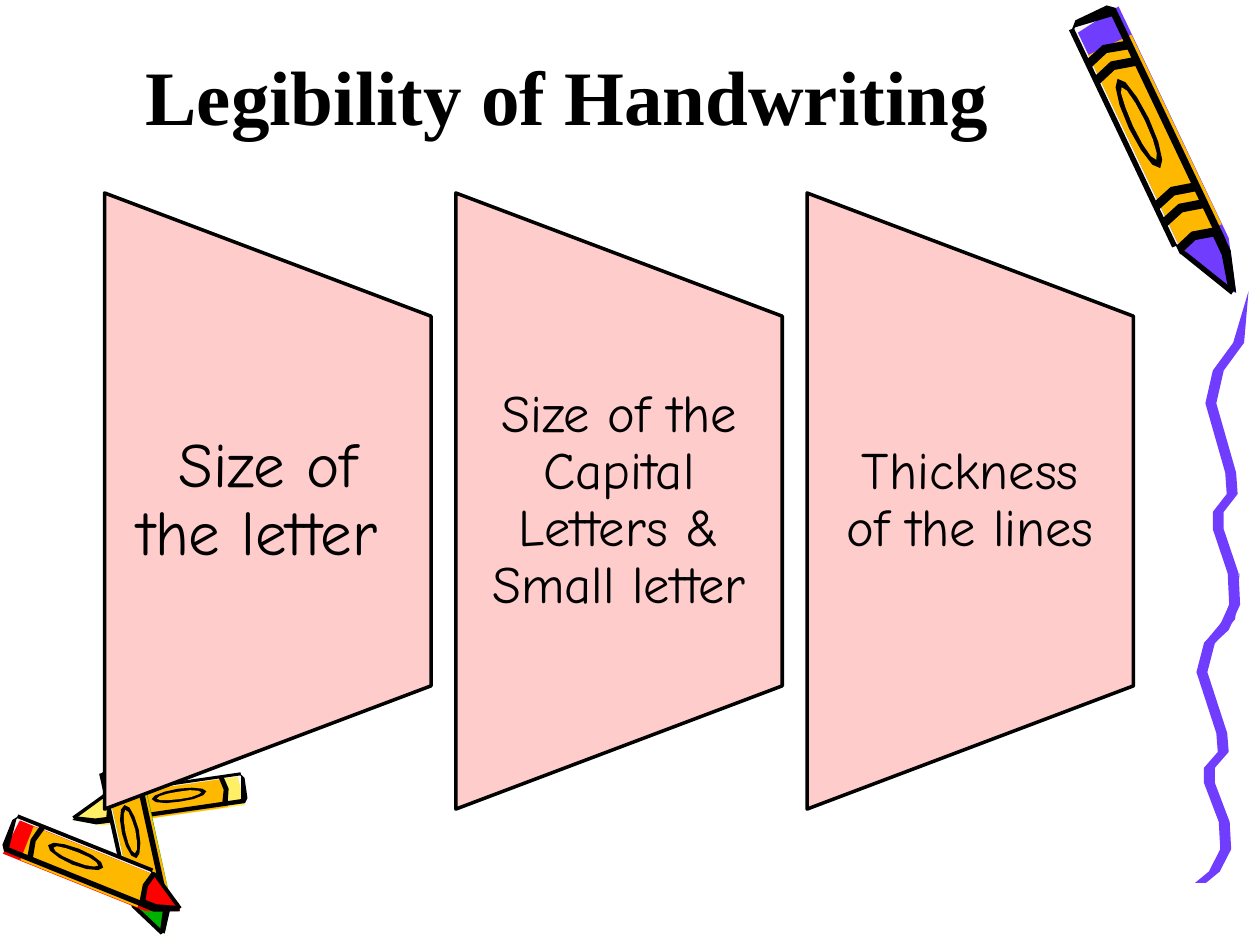
from dataclasses import dataclass
from math import cos, hypot, sin, tau

from pptx import Presentation
from pptx.dml.color import RGBColor
from pptx.enum.shapes import MSO_SHAPE
from pptx.enum.text import MSO_ANCHOR, MSO_AUTO_SIZE, PP_ALIGN
from pptx.util import Cm, Pt

MANUAL_OPERATION = MSO_SHAPE.FLOWCHART_MANUAL_OPERATION
MIDDLE, BOTTOM = MSO_ANCHOR.MIDDLE, MSO_ANCHOR.BOTTOM
CENTER = PP_ALIGN.CENTER
NO_AUTOFIT = MSO_AUTO_SIZE.NONE


@dataclass(frozen=True)
class Theme:
    black: RGBColor = RGBColor.from_string("000000")
    purple: RGBColor = RGBColor.from_string("703DFF")
    orange: RGBColor = RGBColor.from_string("FFB800")
    paper: RGBColor = RGBColor.from_string("F8F8F8")
    yellow: RGBColor = RGBColor.from_string("FFEF66")
    red: RGBColor = RGBColor.from_string("FF0000")
    green: RGBColor = RGBColor.from_string("00B200")
    panel: RGBColor = RGBColor.from_string("FFCCCC")
    title_font: str = "Times New Roman"
    body_font: str = "Comic Neue"
    title_size: Pt = Pt(44)
    large_size: Pt = Pt(36)
    body_size: Pt = Pt(30)


theme = Theme()


def draw_outline(points, colour):
    """Draw a closed, filled outline through (x, y) points given in centimetres."""
    vertices = [(round(x * 100), round(y * 100)) for x, y in points]
    builder = slide.shapes.build_freeform(*vertices[0], scale=Cm(0.01))
    builder.add_line_segments(vertices[1:], close=True)
    outline = builder.convert_to_shape()
    outline.shadow.inherit = False
    outline.fill.solid()
    outline.fill.fore_color.rgb = colour
    outline.line.fill.background()


def write_text(shape, text, font_name, size, anchor, bold=False):
    """Fill a shape with one centred black paragraph and return it."""
    frame = shape.text_frame
    frame.text = text
    frame.word_wrap = True
    frame.auto_size = NO_AUTOFIT
    frame.vertical_anchor = anchor
    paragraph = frame.paragraphs[0]
    paragraph.alignment = CENTER
    font = paragraph.runs[0].font
    font.name, font.size, font.bold = font_name, size, bold
    font.color.rgb = theme.black
    return paragraph


presentation = Presentation()
presentation.slide_width, presentation.slide_height = Cm(25.4), Cm(19.05)
slide = presentation.slides.add_slide(presentation.slide_layouts[5])

# A crayon is described by (along, across): along runs from 0 at the flat end
# to 1 at the tip, across is a share of the width on either side of the axis.
PAPER = [(0, -0.5), (0, 0.35), (0.78, 0.35), (0.78, -0.5)]
WAX = [(0.02, -0.4), (0, 0.43), (0.83, 0.43), (1, 0.14), (0.98, 0), (0.78, -0.4)]
SLEEVE = [(0.1, -0.4), (0.1, 0.42), (0.78, 0.42), (0.78, -0.4)]
INK = {
    "near edge": [(0, -0.52), (0, -0.43), (0.78, -0.43), (0.78, -0.52)],
    "far edge": [(0, 0.25), (0, 0.37), (0.83, 0.37), (0.83, 0.25)],
    "flat end": [(0.01, -0.52), (-0.02, -0.35), (-0.02, 0.25), (0, 0.37), (0.02, 0.28), (0, -0.4)],
    "near tip": [(0.77, -0.44), (0.81, -0.44), (1, 0.05), (0.99, 0.13)],
    "far tip": [(0.78, 0.37), (0.87, 0.37), (1, 0.14), (0.97, 0.06), (0.87, 0.2), (0.78, 0.2)],
}
OVALS = [(0.16, 0.19, theme.black), (0.13, 0.11, theme.orange)]  # radii along and across
OVAL_ALONG, OVAL_ACROSS, OVAL_STEPS = 0.37, -0.12, 12

# Flat end, tip, width (negative mirrors the crayon), wax colour, places of the bands
CRAYONS = [
    ((22.1, 0.35), (24.77, 5.97), 1.17, theme.purple, [0.11, 0.17, 0.62, 0.68, 0.78]),
    ((4.9, 15.93), (1.45, 16.43), 0.7, theme.yellow, [0.1, 0.78]),
    ((2.46, 15.5), (3.2, 18.85), 0.9, theme.green, [0.1, 0.78]),
    ((0.2, 16.85), (3.68, 18.25), -0.9, theme.red, [0.13, 0.78]),
]
for (end_x, end_y), (tip_x, tip_y), width, wax, bands in CRAYONS:
    parts = [(PAPER, theme.paper), (WAX, wax), (SLEEVE, theme.orange)]
    parts += [(points, theme.black) for points in INK.values()]
    for band in bands:
        points = [(band, -0.45), (band - 0.02, -0.1), (band, 0.3),
                  (band + 0.03, 0.3), (band + 0.01, -0.1), (band + 0.03, -0.45)]
        parts.append((points, theme.black))
    for radius_along, radius_across, colour in OVALS:
        angles = [tau * step / OVAL_STEPS for step in range(OVAL_STEPS)]
        points = [(OVAL_ALONG + radius_along * cos(angle), OVAL_ACROSS + radius_across * sin(angle))
                  for angle in angles]
        parts.append((points, colour))

    axis_x, axis_y = tip_x - end_x, tip_y - end_y
    across_scale = width / hypot(axis_x, axis_y)
    for points, colour in parts:
        draw_outline([(end_x + along * axis_x + across * across_scale * axis_y,
                       end_y + along * axis_y - across * across_scale * axis_x)
                      for along, across in points], colour)

# Squiggle: one centre line, drawn twice; the lower strand is shorter
CENTER_LINE = [(0.89, 0), (0.69, 1.04), (0.28, 1.6), (0.13, 2.26), (0.53, 3.66), (0.56, 4.09),
               (0.28, 4.45), (0.28, 4.8), (0.58, 5.69), (0.61, 6.32), (0.38, 6.83), (0.1, 7.09)]
HALF_STROKE = 0.11
STRANDS = [(24.1, 11.56, 0.88), (24.28, 5.87, 1)]  # left, top, vertical scale
for left, top, scale in STRANDS:
    strand = [(left + x, top + scale * y) for x, y in CENTER_LINE]
    left_side = [(x - HALF_STROKE, y) for x, y in strand[1:]]
    right_side = [(x + HALF_STROKE, y) for x, y in strand[1:]]
    draw_outline(strand[:1] + right_side + left_side[::-1], theme.purple)

# Title
title = slide.shapes.title
title.left, title.top, title.width, title.height = Cm(1.9), Cm(0.43), Cm(19.08), Cm(2.54)
write_text(title, "Legibility of Handwriting", theme.title_font, theme.title_size, BOTTOM, bold=True)

# Panels: trapezoids turned on their side, each with an upright label
PANELS = [
    ("Size of the letter ", theme.large_size, Cm(0.64)),
    ("Size of the Capital Letters & Small letter", theme.body_size, Cm(0.53)),
    ("Thickness of the lines", theme.body_size, Cm(0.53)),
]
PANEL_WIDTH, PANEL_HEIGHT, LABEL_HEIGHT = Cm(6.58), Cm(12.42), Cm(7.44)
FIRST_CENTER_X, CENTER_Y, PANEL_STEP = Cm(5.4), Cm(10.1), Cm(7.08)
for index, (text, size, inset) in enumerate(PANELS):
    center_x = FIRST_CENTER_X + index * PANEL_STEP
    panel = slide.shapes.add_shape(
        MANUAL_OPERATION, center_x - PANEL_HEIGHT // 2, CENTER_Y - PANEL_WIDTH // 2,
        PANEL_HEIGHT, PANEL_WIDTH)
    panel.rotation = 270
    panel.shadow.inherit = False
    panel.fill.solid()
    panel.fill.fore_color.rgb = theme.panel
    panel.line.color.rgb = theme.black
    panel.line.width = Pt(2)

    label = slide.shapes.add_textbox(
        center_x - PANEL_WIDTH // 2, CENTER_Y - LABEL_HEIGHT // 2, PANEL_WIDTH, LABEL_HEIGHT)
    frame = label.text_frame
    frame.margin_left = frame.margin_right = inset
    frame.margin_top = frame.margin_bottom = 0
    paragraph = write_text(label, text, theme.body_font, size, MIDDLE)
    paragraph.line_spacing = 0.9

presentation.save("out.pptx")
